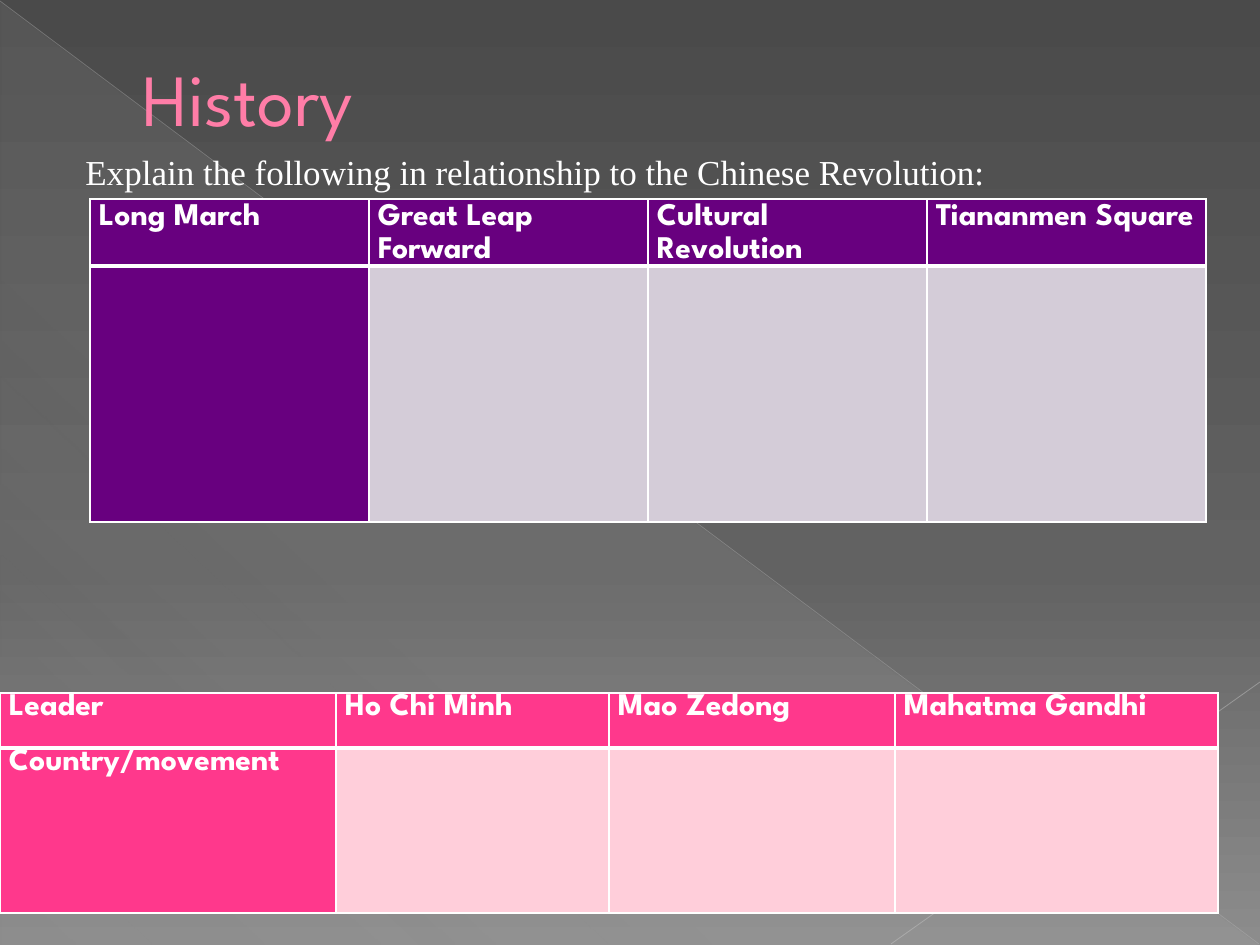
"""Builds the History slide with two tables to fill in."""
from lxml import etree
from pptx import Presentation, util as u
from pptx.dml.color import RGBColor
from pptx.enum import shapes, text
from pptx.oxml.ns import qn

PX = 914400 / 126
COLORS = {
    "white": "FFFFFF", "title": "FF7DA7", "title_edge": "B12761",
    "purple": "68007F", "lilac": "D4CCD8", "pink": "FF388C", "blush": "FFCEDA",
    "sheen": "D2D2D2", "long_ray": "BFBFBF", "short_ray": "C6C6C6",
    "sky": "4A4A4A", "middle": "626262", "ground": "8C8C8C",
}


def write(frame, words, size=18, font="League Spartan", color="white", bold=False,
          spacing=1.0, anchor=text.MSO_ANCHOR.TOP, indent=0):
    frame.word_wrap = True
    frame.vertical_anchor = anchor
    paragraph = frame.paragraphs[0]
    paragraph.alignment = text.PP_ALIGN.LEFT
    paragraph.line_spacing = spacing
    if indent:
        properties = paragraph._p.get_or_add_pPr()
        properties.set("marL", str(round(indent * PX)))
        properties.set("indent", "0")
    run = paragraph.add_run()
    run.text = words
    run.font.size = u.Pt(size)
    run.font.name = font
    run.font.bold = bold
    run.font.color.rgb = RGBColor.from_string(COLORS[color])
    return run


def blend(fill, element, angle, stops):
    fill.gradient()
    gradient = element.find(".//" + qn("a:gradFill"))
    gradient.find(qn("a:lin")).set("ang", str(angle * 60000))
    stop_list = gradient.find(qn("a:gsLst"))
    stop_list.clear()
    for place, color, opacity in stops:
        stop = etree.SubElement(stop_list, qn("a:gs"), pos=str(place * 1000))
        tint = etree.SubElement(stop, qn("a:srgbClr"), val=COLORS[color])
        etree.SubElement(tint, qn("a:alpha"), val=str(opacity * 1000))


deck = Presentation()
deck.slide_width, deck.slide_height = round(1260 * PX), round(945 * PX)
slide = deck.slides.add_slide(deck.slide_layouts[5])
blend(slide.background.fill, slide._element, 90,
      [(0, "sky", 100), (60, "middle", 100), (100, "ground", 100)])

sheen = slide.shapes.add_shape(shapes.MSO_SHAPE.RIGHT_TRIANGLE,
                               *[round(n * PX) for n in (1, 2, 1258, 943)])
sheen.shadow.inherit = False
sheen.line.fill.background()
blend(sheen.fill, sheen._element, 133,
      [(0, "sheen", 10), (70, "sheen", 8), (100, "sheen", 1)])

for ends, color, width, opacity in [
    ((0, 1, 1259, 944), "long_ray", 0.39, 35),
    ((1260, 682, 891, 944), "short_ray", 0.47, 45),
]:
    ray = slide.shapes.add_connector(shapes.MSO_CONNECTOR.STRAIGHT,
                                     *[round(n * PX) for n in ends])
    ray.line.width = u.Pt(width)
    ray.line.color.rgb = RGBColor.from_string(COLORS[color])
    tint = ray._element.find(".//" + qn("a:srgbClr"))
    etree.SubElement(tint, qn("a:alpha"), val=str(opacity * 1000))
    etree.SubElement(ray._element.spPr, qn("a:effectLst"))

title = slide.shapes.title
title.left, title.top, title.width, title.height = [
    round(n * PX) for n in (63, 37, 1134, 121)]
heading = write(title.text_frame, "History", size=42, color="title",
                anchor=text.MSO_ANCHOR.MIDDLE, indent=67)
edge = etree.Element(qn("a:ln"), w="6350")
edge_fill = etree.SubElement(edge, qn("a:solidFill"))
etree.SubElement(edge_fill, qn("a:srgbClr"), val=COLORS["title_edge"])
heading.font._element.insert(0, edge) if hasattr(heading.font, "_element") else \
    heading._r.get_or_add_rPr().insert(0, edge)
slide.shapes._spTree.append(title._element)

for left, top, widths, heights, rows, strong, pale, spacing in [
    (90, 199, [279] * 4, [67, 256],
     [["Long March", "Great Leap Forward", "Cultural Revolution", "Tiananmen Square"],
      [""] * 4], "purple", "lilac", 1.15),
    (0, 693, [336, 273, 286, 323], [55, 165],
     [["Leader", "Ho Chi Minh", "Mao Zedong", "Mahatma Gandhi"],
      ["Country/movement", "", "", ""]], "pink", "blush", 1.0),
]:
    grid = slide.shapes.add_table(
        2, 4, *[round(n * PX) for n in (left, top, sum(widths), sum(heights))]).table
    grid.horz_banding = False
    for column, width in zip(grid.columns, widths):
        column.width = round(width * PX)
    for row, height in zip(grid.rows, heights):
        row.height = round(height * PX)
    for r, labels in enumerate(rows):
        for c, label in enumerate(labels):
            cell = grid.cell(r, c)
            cell.margin_left = cell.margin_right = round(9 * PX)
            cell.margin_top = cell.margin_bottom = 0
            cell.fill.solid()
            cell.fill.fore_color.rgb = RGBColor.from_string(
                COLORS[strong if r == 0 or c == 0 else pale])
            if label:
                write(cell.text_frame, label, bold=True, spacing=spacing)
            inner_side = "lnB" if r == 0 else "lnT"
            for order, side in enumerate(["lnL", "lnR", "lnT", "lnB"]):
                border = etree.Element(qn("a:" + side),
                                       w=str(u.Pt(3 if side == inner_side else 1)))
                border_fill = etree.SubElement(border, qn("a:solidFill"))
                etree.SubElement(border_fill, qn("a:srgbClr"), val=COLORS["white"])
                cell._tc.get_or_add_tcPr().insert(order, border)

prompt = slide.shapes.add_textbox(*[round(n * PX) for n in (73, 146, 998, 52)])
write(prompt.text_frame, "Explain the following in relationship to the Chinese Revolution:",
      size=20, font="Times New Roman", anchor=text.MSO_ANCHOR.MIDDLE)

deck.save("out.pptx")
